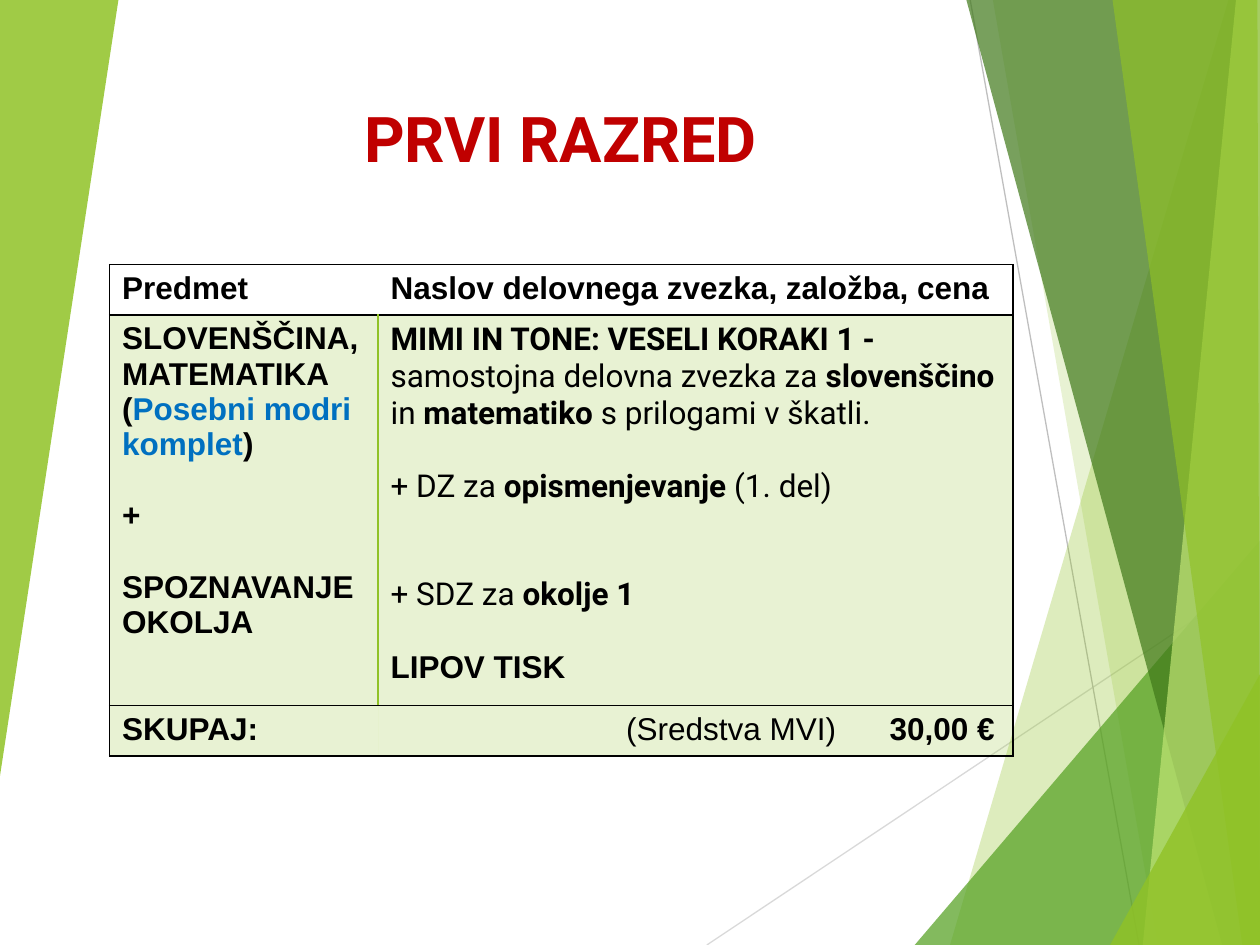
"""Build the first-grade workbook price slide."""
from dataclasses import dataclass

import lxml.etree
import pptx
import pptx.dml.color
import pptx.enum.shapes
import pptx.enum.text
import pptx.oxml.ns
import pptx.util

Inches, Pt = pptx.util.Inches, pptx.util.Pt
qn = pptx.oxml.ns.qn
GREEN, BLACK = "90C226", "000000"
NO_STYLE = "{2D5ABB26-0587-4C30-8999-92F81FD0307C}"


@dataclass(frozen=True)
class Facet:
    color: str
    opacity: int
    points: tuple


@dataclass(frozen=True)
class Ray:
    color: str
    start: tuple
    end: tuple


@dataclass(frozen=True)
class Span:
    text: str
    bold: bool = True
    font: str = "Arial"
    color: str = BLACK


@dataclass(frozen=True)
class Para:
    spans: tuple
    before: float = 0
    tabs: tuple = ()


@dataclass(frozen=True)
class Cell:
    paras: tuple
    borders: dict
    filled: bool = True


def rgb(color: str) -> pptx.dml.color.RGBColor:
    return pptx.dml.color.RGBColor.from_string(color)


def sub(parent, tag: str, **attrs):
    return lxml.etree.SubElement(parent, qn(tag), **attrs)


def paint(fill, parent, color: str, opacity: int) -> None:
    fill.solid()
    fill.fore_color.rgb = rgb(color)
    clr = parent.find(qn("a:solidFill")).find(qn("a:srgbClr"))
    sub(clr, "a:alpha", val=str(opacity * 1000))


def draw_facet(slide, facet: Facet) -> None:
    pts = [(Inches(x), Inches(y)) for x, y in facet.points]
    fb = slide.shapes.build_freeform(*pts[0])
    fb.add_line_segments(pts[1:], close=True)
    s = fb.convert_to_shape()
    s.shadow.inherit = False
    s.line.fill.background()
    paint(s.fill, s._element.spPr, facet.color, facet.opacity)


def draw_ray(slide, ray: Ray) -> None:
    ends = [Inches(v) for v in ray.start + ray.end]
    s = slide.shapes.add_connector(pptx.enum.shapes.MSO_CONNECTOR.STRAIGHT, *ends)
    s.line.color.rgb = rgb(ray.color)
    s.line.width = Pt(0.75)
    sub(s._element.spPr, "a:effectLst")


def style_run(r, size: float, span: Span) -> None:
    r.font.size = Pt(size)
    r.font.bold = span.bold
    r.font.name = span.font
    r.font.color.rgb = rgb(span.color)


def write_para(p, para: Para) -> None:
    p.space_before = Pt(para.before)
    if para.tabs:
        tab_list = sub(p._p.get_or_add_pPr(), "a:tabLst")
        for pos in para.tabs:
            sub(tab_list, "a:tab", pos=str(Inches(pos)), algn="l")
    for span in para.spans:
        r = p.add_run()
        r.text = span.text
        style_run(r, 18, span)


def draw_cell(tc, cell: Cell) -> None:
    tc.vertical_anchor = pptx.enum.text.MSO_ANCHOR.TOP
    tf = tc.text_frame
    for i, para in enumerate(cell.paras):
        write_para(tf.add_paragraph() if i else tf.paragraphs[0], para)
    pr = tc._tc.get_or_add_tcPr()
    for side in "LRTB":
        if side in cell.borders:
            ln = sub(pr, f"a:ln{side}", w=str(Pt(1)))
            sub(sub(ln, "a:solidFill"), "a:srgbClr", val=cell.borders[side])
    if cell.filled:
        paint(tc.fill, pr, GREEN, 20)
    else:
        tc.fill.background()


def draw_table(slide, rows: tuple, widths: tuple, heights: tuple) -> None:
    frame = slide.shapes.add_table(len(rows), len(widths), Inches(0.87), Inches(2.1),
                                   Inches(sum(widths)), Inches(sum(heights)))
    table = frame.table
    table.first_row = table.horz_banding = False
    table._tbl.tblPr.find(qn("a:tableStyleId")).text = NO_STYLE
    for col, width in zip(table.columns, widths):
        col.width = Inches(width)
    for i, (row, height) in enumerate(zip(rows, heights)):
        table.rows[i].height = Inches(height)
        for j, cell in enumerate(row):
            draw_cell(table.cell(i, j), cell)


def plain(text: str) -> Span:
    return Span(text, False, "Roboto")


def strong(text: str) -> Span:
    return Span(text, True, "Roboto")


RAYS = (Ray("D9D9D9", (5.61, 7.5), (10, 4.57)), Ray("BFBFBF", (7.7, 0), (9.04, 7.5)))
FACETS = (
    Facet(GREEN, 30, ((9.75, 0), (7.54, 7.5), (10, 7.5), (10, 0))),
    Facet(GREEN, 20, ((7.88, 0), (9.19, 7.5), (10, 7.5), (10, 0))),
    Facet("54A021", 72, ((7.26, 7.5), (10, 4.29), (10, 7.5))),
    Facet("3F7819", 70, ((7.67, 0), (9.7, 7.5), (10, 7.5), (10, 0))),
    Facet("C0E474", 70, ((9.81, 0), (9.07, 7.5), (10, 7.5), (10, 0))),
    Facet(GREEN, 65, ((8.83, 0), (9.86, 7.5), (10, 7.5), (9.98, 0))),
    Facet(GREEN, 80, ((8.81, 7.5), (10, 5.35), (10, 7.5))),
    Facet(GREEN, 85, ((0, 0), (0.94, 0), (0, 6.16))),
)
LINE = 20.5
LEFT = dict.fromkeys("LTB", BLACK)
RIGHT = dict.fromkeys("RTB", BLACK)
SUBJECTS = (
    Para((Span("SLOVENŠČINA,"),)),
    Para((Span("MATEMATIKA"),)),
    Para((Span("("), Span("Posebni modri komplet", color="0070C0"), Span(")"))),
    Para((Span("+"),), LINE),
    Para((Span("SPOZNAVANJE OKOLJA"),), LINE),
)
WORKBOOKS = (
    Para((strong("MIMI IN TONE: VESELI KORAKI 1 - "), plain("samostojna delovna zvezka za "),
          strong("slovenščino"), plain(" in "), strong("matematiko"),
          plain(" s prilogami v škatli."))),
    Para((plain("+ DZ za "), strong("opismenjevanje "), plain("(1. del)")), LINE),
    Para((plain("+ SDZ za "), strong("okolje 1")), 2 * LINE),
    Para((Span("LIPOV TISK"),), LINE),
)
TOTAL = Para((Span("\t(Sredstva MVI)\t", False), Span("30,00 €")), tabs=(1.87, 3.96))
ROWS = (
    (Cell((Para((Span("Predmet"),)),), LEFT, False),
     Cell((Para((Span("Naslov delovnega zvezka, založba, cena"),)),), RIGHT, False)),
    (Cell(SUBJECTS, {**LEFT, "R": GREEN}), Cell(WORKBOOKS, {**RIGHT, "L": GREEN})),
    (Cell((Para((Span("SKUPAJ:"),)),), LEFT), Cell((TOTAL,), RIGHT)),
)


def main() -> None:
    prs = pptx.Presentation()
    prs.slide_width, prs.slide_height = Inches(10), Inches(7.5)
    slide = prs.slides.add_slide(prs.slide_layouts[6])
    for ray in RAYS:
        draw_ray(slide, ray)
    for facet in FACETS:
        draw_facet(slide, facet)
    title = slide.shapes.add_textbox(Inches(2.4), Inches(0.74), Inches(4.1), Inches(0.71))
    tf = title.text_frame
    tf.word_wrap = True
    tf.text = "PRVI RAZRED"
    p = tf.paragraphs[0]
    p.alignment = pptx.enum.text.PP_ALIGN.CENTER
    style_run(p.runs[0], 36, Span(tf.text, True, "Roboto", "C00000"))
    draw_table(slide, ROWS, (2.13, 5.04), (0.4, 3.1, 0.4))
    prs.save("out.pptx")


if __name__ == "__main__":
    main()
